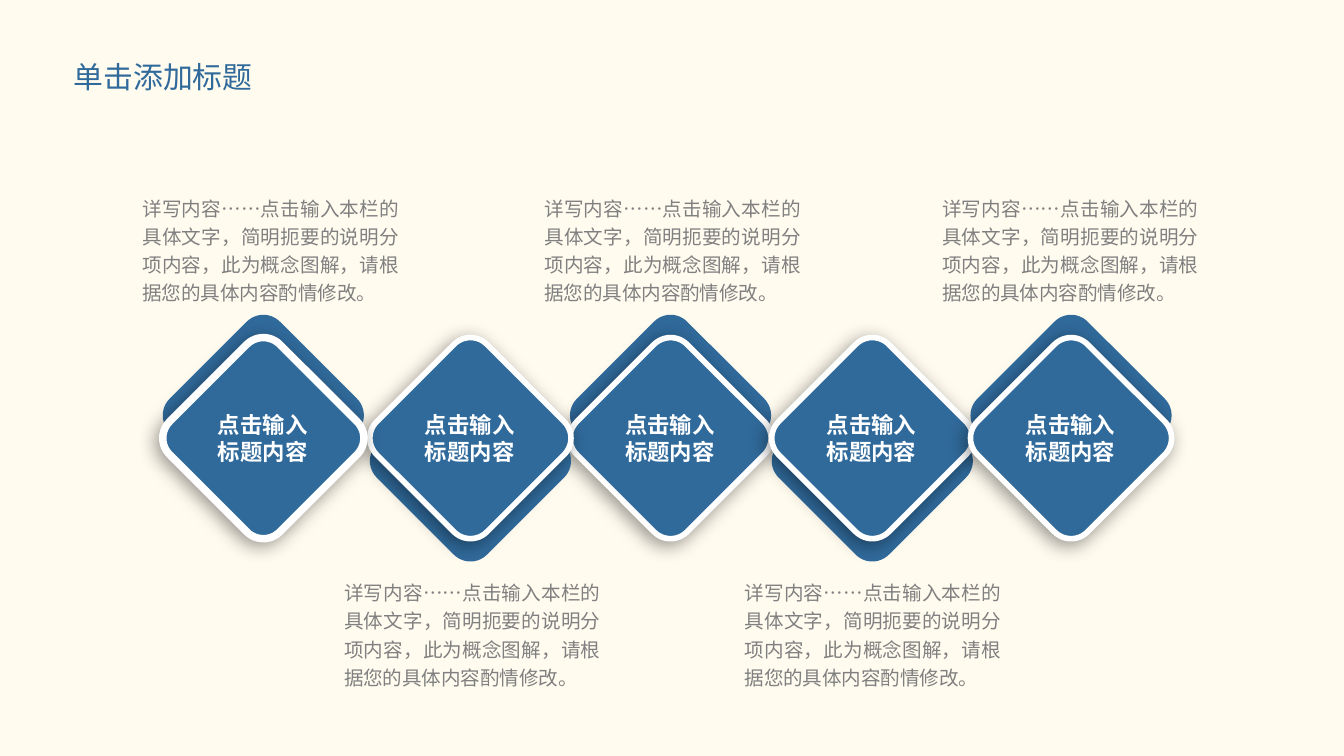
from lxml import etree
from pptx import Presentation
from pptx.dml.color import RGBColor
from pptx.enum.shapes import MSO_SHAPE
from pptx.enum.text import MSO_ANCHOR, MSO_AUTO_SIZE, PP_ALIGN
from pptx.oxml import parse_xml
from pptx.oxml.ns import nsdecls, qn
from pptx.util import Inches, Pt

COLORS = {"background": "FFFBEF", "blue": "306A9B", "white": "FFFFFF", "gray": "808080"}
FONT = "Noto Sans CJK SC"
LABEL = "点击输入标题内容"
CAPTION = "详写内容……点击输入本栏的具体文字，简明扼要的说明分项内容，此为概念图解，请根据您的具体内容酌情修改。"
DIAMOND_SIZE = 1.16
FRONT_TOP = 2.68
OFFSET = 0.17
SHADOW = f"""<a:effectLst {nsdecls("a")}>
  <a:outerShdw blurRad="{Pt(10)}" dist="{Pt(3)}" dir="8100000" algn="ctr">
    <a:srgbClr val="000000"><a:alpha val="40000"/></a:srgbClr>
  </a:outerShdw>
</a:effectLst>"""


def write(shape, text, size, color, align, bold=False):
    """Put one formatted run in the shape and return its paragraph."""
    shape.text_frame.word_wrap = True
    paragraph = shape.text_frame.paragraphs[0]
    paragraph.alignment = align
    run = paragraph.add_run()
    run.text = text
    run.font.size = Pt(size)
    run.font.bold = bold
    run.font.name = FONT
    run.font.color.rgb = RGBColor.from_string(COLORS[color])
    east_asian = etree.SubElement(run.font._element, qn("a:ea"))
    east_asian.set("typeface", FONT)
    return paragraph


def add_diamond(group, left, top, rotation):
    size = Inches(DIAMOND_SIZE)
    diamond = group.shapes.add_shape(
        MSO_SHAPE.ROUNDED_RECTANGLE, Inches(left), Inches(top), size, size)
    diamond.adjustments[0] = 0.15
    diamond.rotation = rotation
    diamond.fill.solid()
    diamond.fill.fore_color.rgb = RGBColor.from_string(COLORS["blue"])
    diamond.line.fill.background()
    return diamond


presentation = Presentation()
presentation.slide_width = Inches(10)
presentation.slide_height = Inches(10 * 9 / 16)
slide = presentation.slides.add_slide(presentation.slide_layouts[5])
slide.background.fill.solid()
slide.background.fill.fore_color.rgb = RGBColor.from_string(COLORS["background"])

title = slide.shapes.title
title.left, title.top = Inches(0.45), Inches(0.39)
title.width, title.height = Inches(1.93), Inches(0.37)
title.text_frame.vertical_anchor = MSO_ANCHOR.TOP
title.text_frame.auto_size = MSO_AUTO_SIZE.SHAPE_TO_FIT_TEXT
write(title, "单击添加标题", 16, "blue", PP_ALIGN.LEFT)

# Left of the diamond, left of the caption
steps = [(1.38, 1.06), (2.92, 2.56), (4.41, 4.05), (5.91, 5.54), (7.39, 7.01)]

# The middle step lies at the back, under both of its neighbours
for index in (2, 1, 0, 3, 4):
    left = steps[index][0]
    points_up = index % 2 == 0
    rotation = 315 if points_up else 135
    group = slide.shapes.add_group_shape()
    back_top = FRONT_TOP - OFFSET if points_up else FRONT_TOP + OFFSET
    back = add_diamond(group, left, back_top, rotation)
    back.shadow.inherit = False
    front = add_diamond(group, left, FRONT_TOP, rotation)
    front.line.color.rgb = RGBColor.from_string(COLORS["white"])
    front.line.width = Pt(4 if index == 0 else 3)
    front._element.spPr.append(parse_xml(SHADOW))

for index, (diamond_left, caption_left) in enumerate(steps):
    label = slide.shapes.add_textbox(
        Inches(diamond_left + 0.08), Inches(3.15), Inches(0.99), Inches(0.22))
    label.text_frame.vertical_anchor = MSO_ANCHOR.MIDDLE
    paragraph = write(label, LABEL, 12, "white", PP_ALIGN.CENTER, bold=True)
    paragraph.space_before = Pt(2.4)

    caption_top = 1.43 if index % 2 == 0 else 4.29
    caption = slide.shapes.add_textbox(
        Inches(caption_left), Inches(caption_top), Inches(1.91), Inches(0.85))
    frame = caption.text_frame
    frame.margin_left = frame.margin_right = frame.margin_top = frame.margin_bottom = 0
    frame.auto_size = MSO_AUTO_SIZE.SHAPE_TO_FIT_TEXT
    paragraph = write(caption, CAPTION, 10.5, "gray", PP_ALIGN.JUSTIFY)
    paragraph.line_spacing = 1.2

presentation.save("out.pptx")
